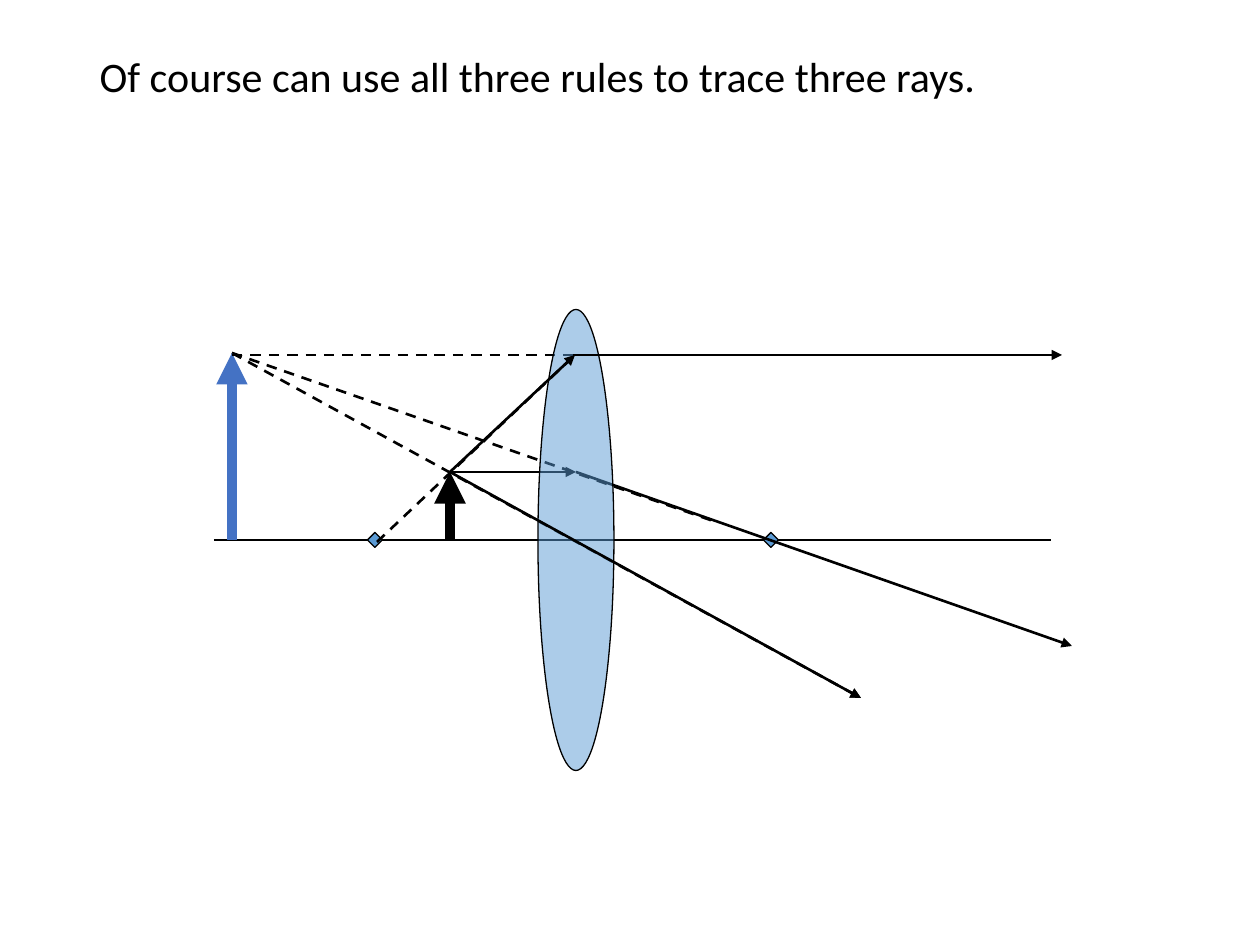
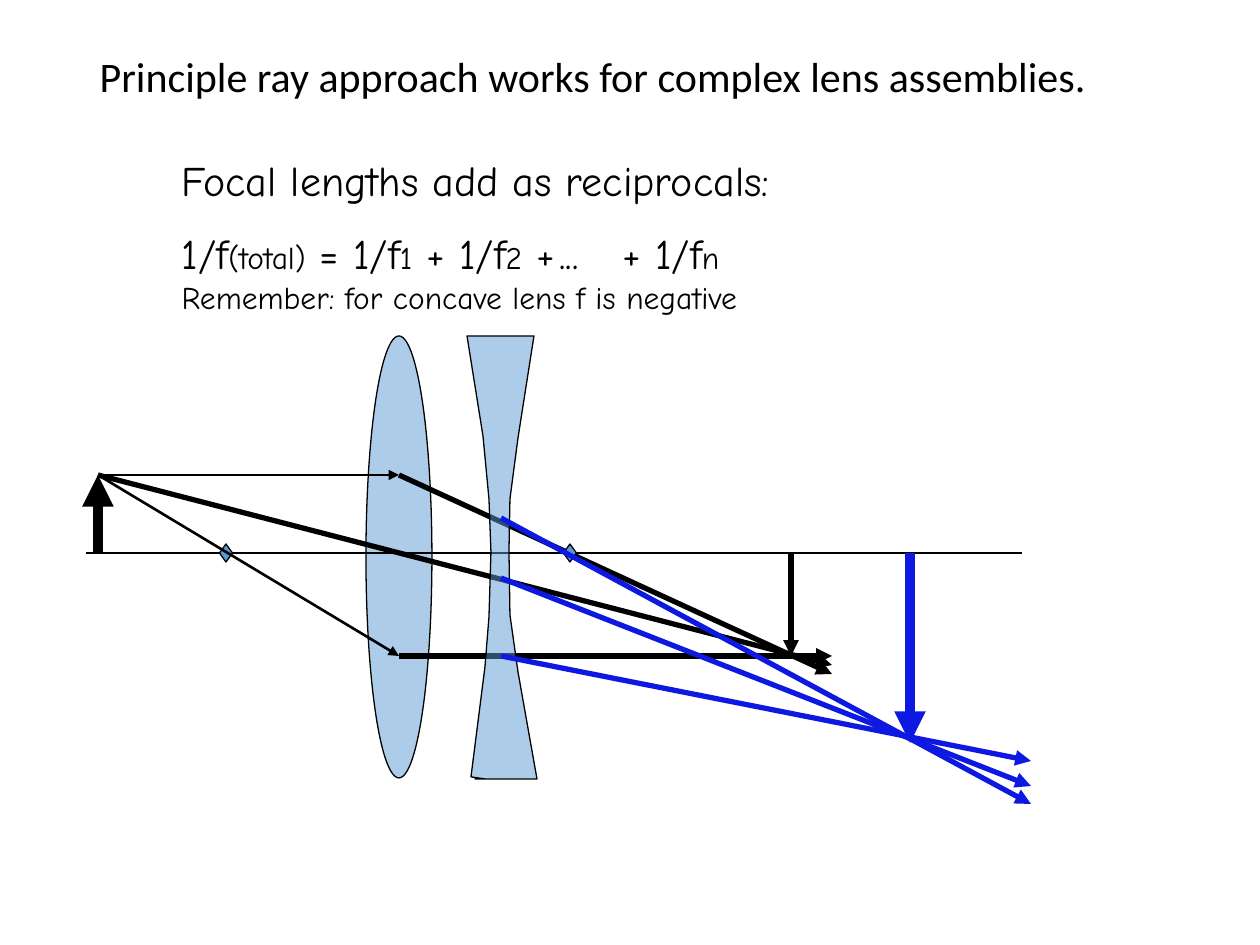
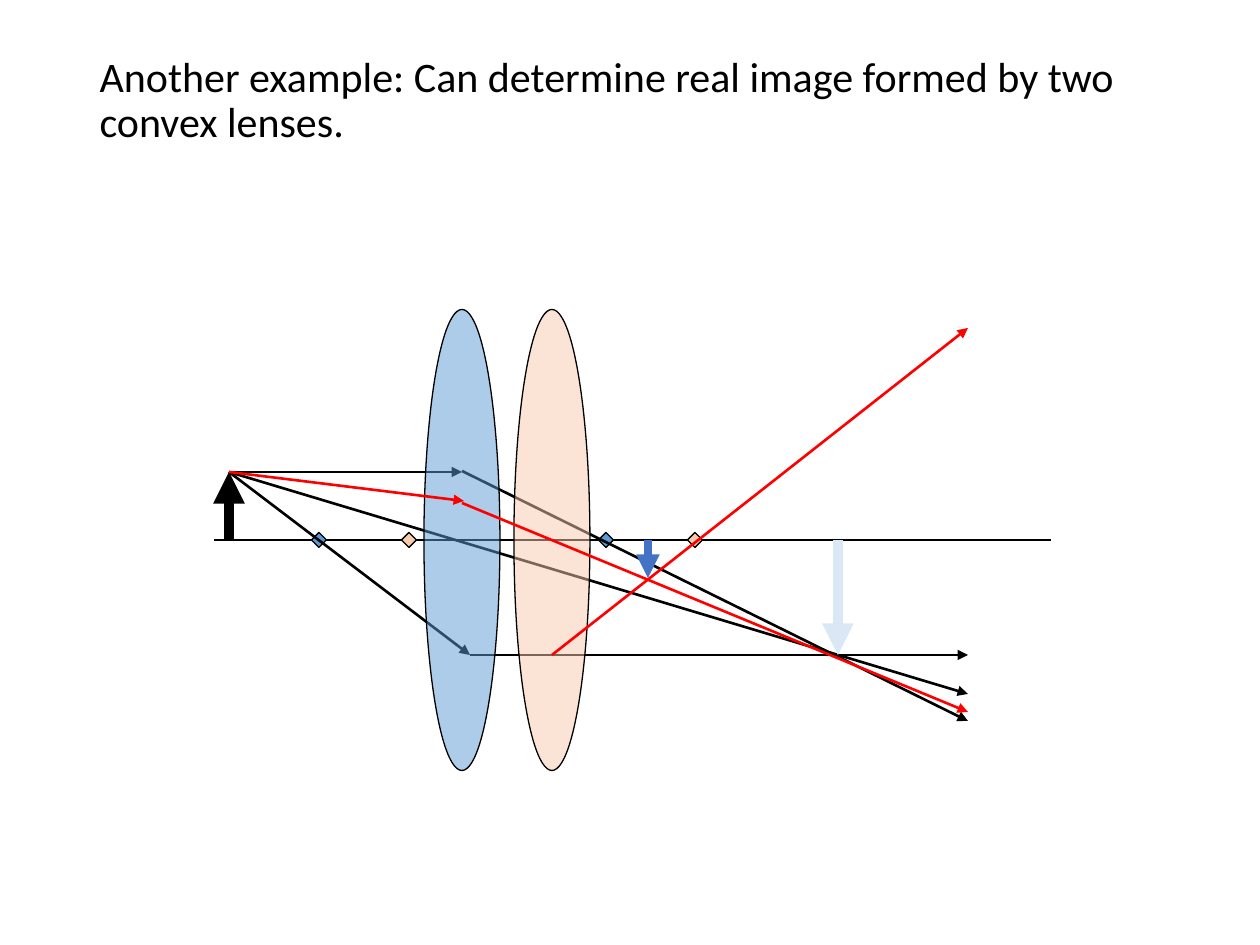
from dataclasses import dataclass

from lxml import etree
from pptx import Presentation
from pptx import util as u
from pptx.dml.color import RGBColor
from pptx.enum import dml, shapes, text
from pptx.oxml.ns import qn

PX = 7257  # EMU in one px, 126 px to the inch


@dataclass(frozen=True)
class Theme:
    ink: str = "000000"
    glass: str = "5B9BD5"
    second_glass: str = "F8CBAD"
    image: str = "4472C4"
    faint_image: str = "DAE8F5"
    bent_ray: str = "0D18E1"
    traced_ray: str = "FF0000"
    title_font: str = "Calibri"
    note_font: str = "Comic Neue"
    large: int = 24
    small: int = 18
    hairline: float = 0.75
    ray: float = 1.5
    heavy_ray: float = 3
    object_arrow: float = 6


theme = Theme()


def draw_line(page, start, end, colour=theme.ink, width=theme.ray, head=True, dashed=False):
    connector = page.shapes.add_connector(
        shapes.MSO_CONNECTOR.STRAIGHT, *[n * PX for n in (*start, *end)])
    connector.line.color.rgb = RGBColor.from_string(colour)
    connector.line.width = u.Pt(width)
    if dashed:
        connector.line.dash_style = dml.MSO_LINE.DASH
    properties = connector._element.spPr
    if head:
        etree.SubElement(properties.find(qn("a:ln")), qn("a:tailEnd"), type="triangle")
    etree.SubElement(properties, qn("a:effectLst"))


def add_solid(page, colour, outline, center=None, size=None, opacity=100):
    """Add a preset centred on a point, or a closed outline given as points."""
    if isinstance(outline, list):
        builder = page.shapes.build_freeform(*outline[0], scale=PX)
        builder.add_line_segments(outline[1:])
        solid = builder.convert_to_shape()
    else:
        (x, y), (width, height) = center, size
        solid = page.shapes.add_shape(
            outline, round((x - width / 2) * PX), round((y - height / 2) * PX),
            width * PX, height * PX)
    solid.shadow.inherit = False
    solid.fill.solid()
    solid.fill.fore_color.rgb = RGBColor.from_string(colour)
    solid.line.color.rgb = RGBColor.from_string(theme.ink)
    solid.line.width = u.Pt(theme.hairline)
    if opacity < 100:
        fill = solid._element.spPr.find(qn("a:solidFill"))
        etree.SubElement(fill[0], qn("a:alpha"), val=str(opacity * 1000))


OVAL = shapes.MSO_SHAPE.OVAL
DIAMOND = shapes.MSO_SHAPE.DIAMOND
LENS = (76, 461)
FOCUS = (15, 15)
AXIS = 540

deck = Presentation()
deck.slide_width, deck.slide_height = u.Inches(10), u.Inches(7.5)
TITLE_ONLY, TITLE_AND_BODY = deck.slide_layouts[5], deck.slide_layouts[1]

pages = []
for layout, heading in (
    (TITLE_ONLY, "Of course can use all three rules to trace three rays."),
    (TITLE_AND_BODY, "Principle ray approach works for complex lens assemblies."),
    (TITLE_ONLY, "Another example: Can determine real image formed by two convex lenses."),
):
    page = deck.slides.add_slide(layout)
    title = page.shapes.title
    title.left, title.top, title.width, title.height = [n * PX for n in (87, 50, 1086, 183)]
    frame = title.text_frame
    frame.word_wrap = True
    frame.auto_size = text.MSO_AUTO_SIZE.NONE
    frame.vertical_anchor = text.MSO_ANCHOR.TOP
    para = frame.paragraphs[0]
    para.alignment = text.PP_ALIGN.LEFT
    para.line_spacing = 0.9
    span = para.add_run()
    span.text = heading
    span.font.name, span.font.size = theme.title_font, u.Pt(theme.large)
    span.font.color.rgb = RGBColor.from_string(theme.ink)
    pages.append(page)
three_rays, assembly, two_convex = pages

# Three rays through one lens
page = three_rays
tip, image_tip, lens_x = (450, 472), (232, 353), 576
upper_ray = 355
draw_line(page, (214, AXIS), (1051, AXIS), width=theme.hairline, head=False)
for x in (771, 375):
    add_solid(page, theme.glass, DIAMOND, (x, AXIS), FOCUS)
draw_line(page, (tip[0], AXIS), tip, width=theme.object_arrow)
draw_line(page, tip, (lens_x, tip[1]))
draw_line(page, (lens_x, tip[1]), (1072, 646))
draw_line(page, image_tip, (716, 522), head=False, dashed=True)
draw_line(page, image_tip, (861, 698), dashed=True)
draw_line(page, (image_tip[0], AXIS), image_tip, theme.image, theme.object_arrow)
draw_line(page, (image_tip[0], upper_ray), (lens_x, upper_ray), head=False, dashed=True)
add_solid(page, theme.glass, OVAL, (lens_x, AXIS), LENS, opacity=50)
draw_line(page, tip, (861, 698))
draw_line(page, (377, 542), (575, upper_ray), head=False, dashed=True)
draw_line(page, tip, (575, upper_ray))
draw_line(page, (573, upper_ray), (1062, upper_ray))

# Convex and concave lens together
page = assembly
tip, axis, lens_x, low_ray = (98, 475), 553, 399, 656
add_solid(page, theme.glass, OVAL, (lens_x, 557), (66, 442), opacity=50)
for start, end_y in ((tip, 665), ((lens_x, tip[1]), 674), ((lens_x, low_ray), low_ray)):
    draw_line(page, start, (832, end_y), width=theme.heavy_ray)
draw_line(page, (86, axis), (1022, axis), width=theme.hairline, head=False)
for x in (570, 226):
    add_solid(page, theme.glass, DIAMOND, (x, axis), (13, 18))
draw_line(page, (tip[0], axis), tip, width=theme.object_arrow)
for end_y in (tip[1], low_ray):
    draw_line(page, tip, (lens_x, end_y))
draw_line(page, (791, axis), (791, low_ray), width=theme.heavy_ray)
draw_line(page, (103, tip[1]), (lens_x, axis), width=1, head=False)
concave_lens = [
    (475, 779), (537, 779), (518, 672), (510, 615), (509, 551), (510, 499),
    (518, 438), (534, 336), (467, 336), (483, 436), (489, 499), (491, 552),
    (489, 617), (485, 667), (471, 777), (485, 779)]
add_solid(page, theme.glass, concave_lens, opacity=50)
draw_line(page, (910, axis), (910, 743), theme.bent_ray, theme.object_arrow)
for start_y, end_y in ((518, 804), (578, 786), (low_ray, 761)):
    draw_line(page, (501, start_y), (1031, end_y), theme.bent_ray, theme.heavy_ray)

box = page.placeholders[1]
box.left, box.top, box.width, box.height = [n * PX for n in (169, 134, 892, 203)]
frame = box.text_frame
frame.word_wrap = True
frame.auto_size = text.MSO_AUTO_SIZE.NONE
frame.vertical_anchor = text.MSO_ANCHOR.MIDDLE
large, small = theme.large, theme.small
formula = [
    ("1/f", large), ("(total)", small), (" = 1/f", large), ("1", small),
    (" + 1/f", large), ("2", small), (" +\t...\t+ 1/f", large), ("n", small),
    ("\n", small), ("Remember: for concave lens f is negative", small)]
for index, spans in enumerate(([("Focal lengths add as reciprocals:", large)], formula)):
    para = frame.add_paragraph() if index else frame.paragraphs[0]
    para.space_before = u.Pt(13 * index)
    properties = para._p.get_or_add_pPr()
    properties.set("marL", "0")
    properties.set("indent", "0")
    etree.SubElement(properties, qn("a:buNone"))
    if index:
        stops = etree.SubElement(properties, qn("a:tabLst"))
        for stop in (400, 463):
            etree.SubElement(stops, qn("a:tab"), pos=str(stop * PX), algn="l")
    for words, size in spans:
        if words == "\n":
            para.add_line_break()
            continue
        span = para.add_run()
        span.text = words
        span.font.name, span.font.size = theme.note_font, u.Pt(size)
        span.font.color.rgb = RGBColor.from_string(theme.ink)

# Two convex lenses
page = two_convex
tip, first_x, second_x, low_ray, end_x = (229, 472), 462, 552, 655, 968
draw_line(page, (214, AXIS), (1051, AXIS), width=theme.hairline, head=False)
draw_line(page, tip, (end_x, 694))
for x in (606, 319):
    add_solid(page, theme.glass, DIAMOND, (x, AXIS), FOCUS)
draw_line(page, (tip[0], AXIS), tip, width=theme.object_arrow)
draw_line(page, tip, (first_x, tip[1]))
draw_line(page, (first_x, 471), (end_x, 721))
draw_line(page, tip, (470, low_ray))
draw_line(page, (470, low_ray), (end_x, low_ray))
for x in (695, 409):
    add_solid(page, theme.second_glass, DIAMOND, (x, AXIS), FOCUS)
for x, colour in ((second_x, theme.second_glass), (first_x, theme.glass)):
    add_solid(page, colour, OVAL, (x, AXIS), LENS, opacity=50)
for start, end in (
    ((second_x, low_ray), (end_x, 328)),
    ((first_x, 503), (end_x, 712)),
    (tip, (464, 501)),
):
    draw_line(page, start, end, theme.traced_ray)
draw_line(page, (648, AXIS), (648, 578), theme.image, 4.5)
draw_line(page, (838, AXIS), (838, low_ray), theme.faint_image, theme.object_arrow)

deck.save("out.pptx")
